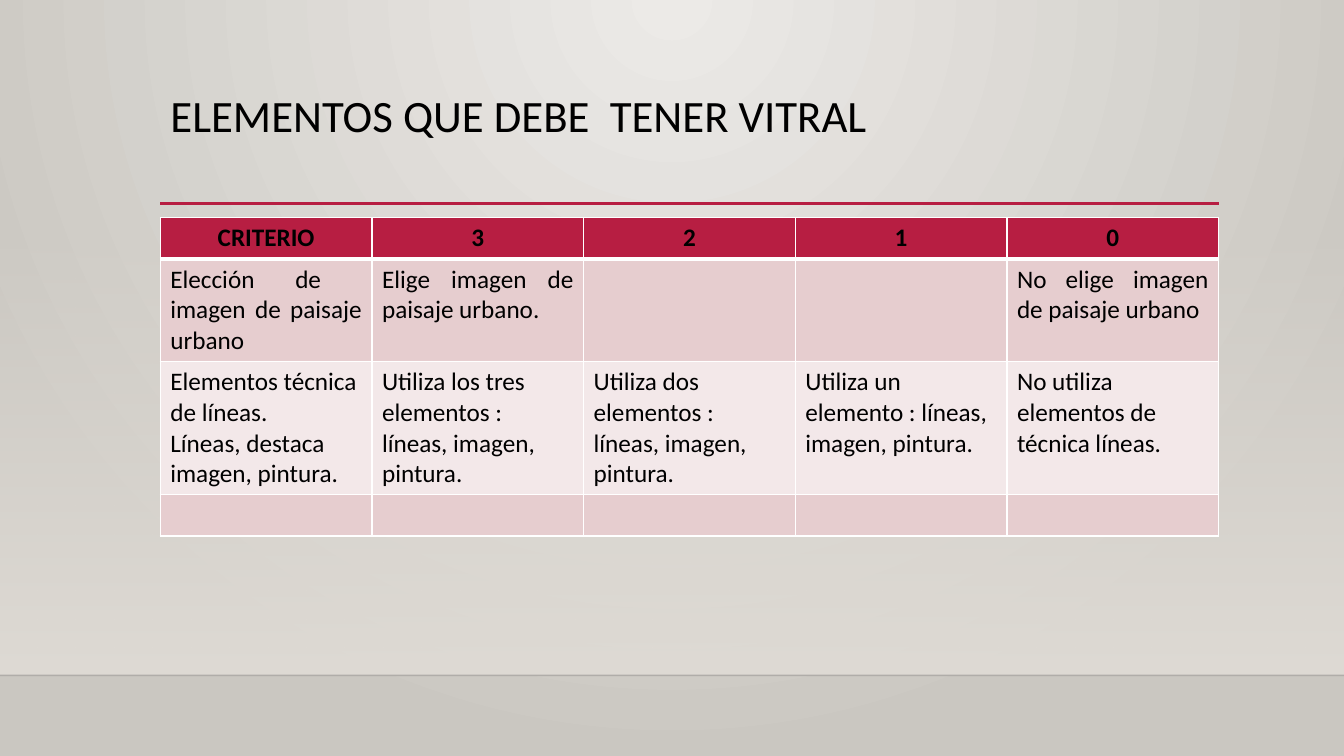
from dataclasses import dataclass

from lxml import etree
from pptx import Presentation
from pptx.dml.color import RGBColor
from pptx.enum.shapes import MSO_CONNECTOR, MSO_SHAPE
from pptx.enum.text import MSO_ANCHOR, MSO_AUTO_SIZE, PP_ALIGN
from pptx.oxml.ns import qn
from pptx.util import Cm, Pt

STRAIGHT = MSO_CONNECTOR.STRAIGHT
RECTANGLE = MSO_SHAPE.RECTANGLE
TOP = MSO_ANCHOR.TOP
NO_AUTOFIT = MSO_AUTO_SIZE.NONE
LEFT, CENTER, JUSTIFY = PP_ALIGN.LEFT, PP_ALIGN.CENTER, PP_ALIGN.JUSTIFY

FONT = "Calibri"
COLORS = {
    "text": "000000",
    "accent": "B71E42",
    "band_dark": "E6CDCF",
    "band_light": "F3E8E9",
    "border": "FFFFFF",
    "glow": "ECEAE7",
    "edge": "CAC7C1",
    "floor": "DFDBD5",
    "horizon": "000001",
}
PAGE_WIDTH, PAGE_HEIGHT = 33.87, 19.05
MARGIN, CONTENT_WIDTH = 4.04, 26.67


@dataclass
class Rule:
    left: float
    right: float
    y: float
    color: str
    width: float
    opacity: int = 100


@dataclass
class TableRow:
    cells: list[str]
    height: float
    fill: str
    align: PP_ALIGN = LEFT
    bold: bool = False
    top: float = 1
    bottom: float = 1


RULES = [
    Rule(0, PAGE_WIDTH, 17.02, "horizon", 1, 20),
    Rule(MARGIN, 30.73, 5.13, "accent", 2.5),
]
ROWS = [
    TableRow(["CRITERIO", "3", "2", "1", "0"], 1.04, "accent", CENTER, True, bottom=3),
    TableRow(["Elección de  imagen de paisaje urbano", "Elige imagen de paisaje urbano.",
              "", "", "No elige imagen de paisaje urbano"],
             2.55, "band_dark", JUSTIFY, top=3),
    TableRow(["Elementos técnica de líneas.\nLíneas, destaca imagen, pintura.",
              "Utiliza los tres elementos : líneas, imagen, pintura.",
              "Utiliza dos elementos : líneas, imagen, pintura.",
              "Utiliza un elemento : líneas, imagen, pintura.",
              "No utiliza elementos de técnica líneas."], 3.35, "band_light"),
    TableRow([""] * 5, 1.04, "band_dark"),
]


def rgb(name: str) -> RGBColor:
    return RGBColor.from_string(COLORS[name])


def set_opacity(element, percent: int) -> None:
    color = next(element.iter(qn("a:srgbClr")))
    etree.SubElement(color, qn("a:alpha"), val=str(percent * 1000))


def set_gradient(fill, start: str, end: str) -> None:
    fill.gradient()
    for stop, name, position in zip(fill.gradient_stops, (start, end), (0, 1)):
        stop.color.rgb = rgb(name)
        stop.position = position


def format_para(para, size: float, align: PP_ALIGN, bold: bool = False) -> None:
    para.alignment = align
    para.font.size = Pt(size)
    for span in para.runs:
        span.font.name = FONT
        span.font.size = Pt(size)
        span.font.bold = bold
        span.font.color.rgb = rgb("text")


def draw_background(page) -> None:
    set_gradient(page.background.fill, "glow", "edge")
    gradient = next(page.element.iter(qn("a:gradFill")))
    gradient.remove(gradient.find(qn("a:lin")))
    circle = etree.SubElement(gradient, qn("a:path"), {"path": "circle"})
    etree.SubElement(circle, qn("a:fillToRect"), l="43000", t="0", r="43000", b="100000")


def draw_floor(page) -> None:
    floor = page.shapes.add_shape(RECTANGLE, 0, Cm(5.61), Cm(PAGE_WIDTH), Cm(11.41))
    floor.shadow.inherit = False
    floor.line.fill.background()
    set_gradient(floor.fill, "floor", "floor")
    floor.fill.gradient_angle = 270
    set_opacity(floor.element, 0)


def draw_rule(page, rule: Rule) -> None:
    line = page.shapes.add_connector(
        STRAIGHT, Cm(rule.left), Cm(rule.y), Cm(rule.right), Cm(rule.y))
    line.line.color.rgb = rgb(rule.color)
    line.line.width = Pt(rule.width)
    if rule.opacity < 100:
        set_opacity(line.element, rule.opacity)
    etree.SubElement(line.element.spPr, qn("a:effectLst"))


def draw_title(page) -> None:
    title = page.shapes.title
    title.left, title.top = Cm(MARGIN), Cm(2.24)
    title.width, title.height = Cm(CONTENT_WIDTH), Cm(2.92)
    frame = title.text_frame
    frame.text = "ELEMENTOS QUE DEBE  TENER VITRAL"
    frame.vertical_anchor = TOP
    frame.auto_size = NO_AUTOFIT
    frame.word_wrap = True
    format_para(frame.paragraphs[0], 32, LEFT)
    frame.paragraphs[0].line_spacing = 0.9


def set_borders(cell, top: float, bottom: float) -> None:
    properties = cell._tc.get_or_add_tcPr()
    widths = {"a:lnL": 1, "a:lnR": 1, "a:lnT": top, "a:lnB": bottom}
    for index, (tag, width) in enumerate(widths.items()):
        border = etree.Element(qn(tag), w=str(Pt(width)))
        solid = etree.SubElement(border, qn("a:solidFill"))
        etree.SubElement(solid, qn("a:srgbClr"), val=COLORS["border"])
        properties.insert(index, border)


def draw_table(page) -> None:
    columns = len(ROWS[0].cells)
    height = sum(row.height for row in ROWS)
    table = page.shapes.add_table(
        len(ROWS), columns, Cm(MARGIN), Cm(5.49), Cm(CONTENT_WIDTH), Cm(height)).table
    for column in table.columns:
        column.width = Cm(CONTENT_WIDTH / columns)
    for row, table_row in zip(ROWS, table.rows):
        table_row.height = Cm(row.height)
        for text, cell in zip(row.cells, table_row.cells):
            cell.text_frame.text = text
            for para in cell.text_frame.paragraphs:
                format_para(para, 18, row.align, row.bold)
            cell.fill.solid()
            cell.fill.fore_color.rgb = rgb(row.fill)
            set_borders(cell, row.top, row.bottom)


def main() -> None:
    deck = Presentation()
    deck.slide_width, deck.slide_height = Cm(PAGE_WIDTH), Cm(PAGE_HEIGHT)
    page = deck.slides.add_slide(deck.slide_layouts[5])

    # Backdrop
    draw_background(page)
    draw_floor(page)
    for rule in RULES:
        draw_rule(page, rule)

    # Content
    draw_title(page)
    draw_table(page)
    deck.save("out.pptx")


if __name__ == "__main__":
    main()
